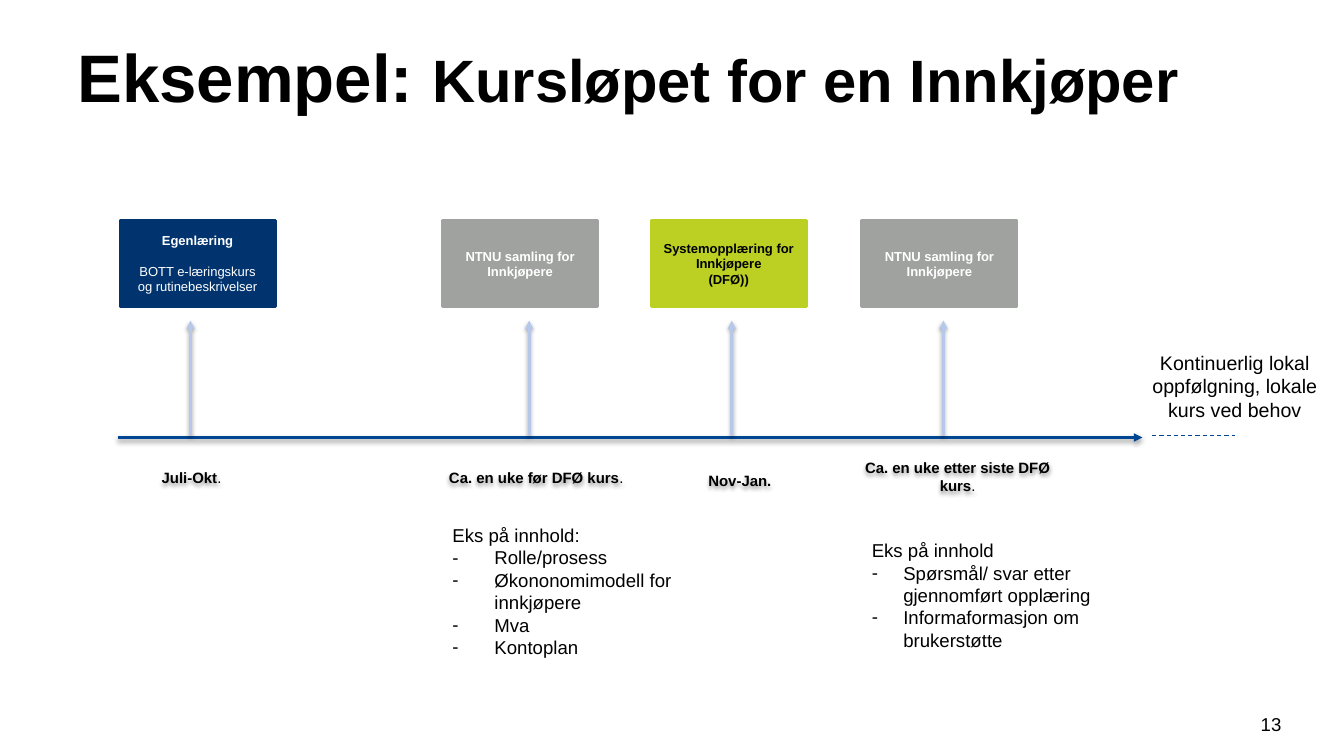
from dataclasses import dataclass, field

from lxml.etree import SubElement
from pptx import Presentation
from pptx.dml.color import RGBColor
from pptx.enum.dml import MSO_LINE_DASH_STYLE as Dash
from pptx.enum.shapes import MSO_CONNECTOR as Connector, MSO_SHAPE as Preset
from pptx.enum.text import MSO_ANCHOR as Anchor, PP_ALIGN as Align
from pptx.oxml.ns import qn
from pptx.util import Pt

BLACK = RGBColor(0x00, 0x00, 0x00)
WHITE = RGBColor(0xFF, 0xFF, 0xFF)
NAVY = RGBColor(0x01, 0x34, 0x6E)
BLUE = RGBColor(0x01, 0x46, 0x93)
PALE_BLUE = RGBColor(0xB6, 0xC8, 0xE9)
GREY = RGBColor(0xA0, 0xA2, 0xA0)
LIME = RGBColor(0xBC, 0xD0, 0x24)

BOX_TOP, BOX_WIDTH, BOX_HEIGHT = 157.7, 110.9, 61.2
ARROW_BOTTOM, ARROW_TOP = 311, 229
AXIS_Y = 312.5


@dataclass
class Run:
    text: str
    size: float
    bold: bool = False
    color: RGBColor = BLACK


@dataclass
class Para:
    runs: list[Run]
    hang: float = 0
    before: float = 0


@dataclass
class Area:
    left: float
    top: float
    width: float
    height: float


@dataclass
class Milestone:
    box_left: float
    fill: RGBColor
    course: list[Para]
    arrow_x: float
    when_area: Area
    when: list[Run]
    content_area: Area | None = None
    content: list[Para] = field(default_factory=list)


def course_line(text: str, color: RGBColor = WHITE, bold: bool = True, before: float = 0) -> Para:
    return Para([Run(text, 9.3, bold, color)], before=before)


def when_runs(text: str, stop: str = "") -> list[Run]:
    return [Run(text, 10.7, True)] + ([Run(stop, 10.7)] if stop else [])


def content_list(heading: str, items: list[str], hang: float) -> list[Para]:
    return [Para([Run(heading, 13.3)])] + [Para([Run(item, 13.3)], hang) for item in items]


def set_effects(shape, shadow: bool) -> None:
    effects = SubElement(shape._element.spPr, qn("a:effectLst"))
    if shadow:
        outer = SubElement(effects, qn("a:outerShdw"), blurRad=str(Pt(3.1)), dist=str(Pt(1.6)),
                           dir="5400000", rotWithShape="0")
        black = SubElement(outer, qn("a:srgbClr"), val="000000")
        SubElement(black, qn("a:alpha"), val="38000")


def write(shape, paras: list[Para], align: Align, anchor: Anchor) -> None:
    frame = shape.text_frame
    frame.word_wrap = True
    frame.vertical_anchor = anchor
    for index, para in enumerate(paras):
        paragraph = frame.paragraphs[0] if index == 0 else frame.add_paragraph()
        paragraph.alignment = align
        if para.before:
            paragraph.space_before = Pt(para.before)
        if para.hang:
            props = paragraph._p.get_or_add_pPr()
            props.set("marL", str(Pt(para.hang)))
            props.set("indent", str(-Pt(para.hang)))
            SubElement(props, qn("a:buFont"), typeface="Arial")
            SubElement(props, qn("a:buChar"), char="-")
        for part in para.runs:
            run = paragraph.add_run()
            run.text = part.text
            look = {"name": "Arial", "size": Pt(part.size), "bold": part.bold}
            for name, value in look.items():
                setattr(run.font, name, value)
            run.font.color.rgb = part.color


def add_text(slide, area: Area, paras: list[Para], align: Align = Align.LEFT,
             anchor: Anchor = Anchor.TOP, shadow: bool = False) -> None:
    box = slide.shapes.add_textbox(Pt(area.left), Pt(area.top), Pt(area.width), Pt(area.height))
    if shadow:
        set_effects(box, True)
    write(box, paras, align, anchor)


def add_line(slide, start: tuple[float, float], end: tuple[float, float], color: RGBColor,
             width: float = 2, arrow: bool = True) -> None:
    line = slide.shapes.add_connector(Connector.STRAIGHT, *map(Pt, start + end))
    line.line.color.rgb = color
    line.line.width = Pt(width)
    if arrow:
        SubElement(line.line._get_or_add_ln(), qn("a:tailEnd"), type="triangle")
    else:
        line.line.dash_style = Dash.DASH
    set_effects(line, arrow)


def add_milestone(slide, step: Milestone) -> None:
    box = slide.shapes.add_shape(Preset.RECTANGLE, Pt(step.box_left), Pt(BOX_TOP),
                                 Pt(BOX_WIDTH), Pt(BOX_HEIGHT))
    box.shadow.inherit = False
    box.fill.solid()
    box.fill.fore_color.rgb = step.fill
    box.line.color.rgb = step.fill
    box.line.width = Pt(2)
    write(box, step.course, Align.CENTER, Anchor.MIDDLE)
    add_line(slide, (step.arrow_x, ARROW_BOTTOM), (step.arrow_x, ARROW_TOP), PALE_BLUE)
    add_text(slide, step.when_area, [Para(step.when)], Align.CENTER, Anchor.MIDDLE, True)
    if step.content_area:
        add_text(slide, step.content_area, step.content)


MILESTONES = [
    Milestone(85.7, NAVY,
              [course_line("Egenlæring"),
               course_line("BOTT e-læringskurs", bold=False, before=10.7),
               course_line("og rutinebeskrivelser", bold=False)],
              136.1, Area(94.3, 326.9, 85, 28.8), when_runs("Juli-Okt", ".")),
    Milestone(316.1, GREY, [course_line("NTNU samling for Innkjøpere")],
              378, Area(302.4, 324.7, 161.3, 33.1), when_runs("Ca. en uke før DFØ kurs", "."),
              Area(316.1, 370.8, 174.2, 136.8),
              content_list("Eks på innhold:",
                           ["Rolle/prosess", "Økononomimodell for innkjøpere", "Mva", "Kontoplan"],
                           30)),
    Milestone(465.1, LIME,
              [course_line("Systemopplæring for Innkjøpere", BLACK), course_line("(DFØ))", BLACK)],
              522.7, Area(486, 329, 85, 28.8), when_runs("Nov-Jan.")),
    Milestone(615.6, GREY, [course_line("NTNU samling for Innkjøpere")],
              673.9, Area(603.4, 324, 161.3, 33.1),
              when_runs("Ca. en uke etter siste DFØ kurs", "."),
              Area(615.6, 381.6, 185.8, 87.8),
              content_list("Eks på innhold",
                           ["Spørsmål/ svar etter gjennomført opplæring",
                            "Informaformasjon om brukerstøtte"], 22.5)),
]


def main() -> None:
    deck = Presentation()
    deck.slide_width, deck.slide_height = Pt(960), Pt(540)
    slide = deck.slides.add_slide(deck.slide_layouts[6])

    # Title and page number
    add_text(slide, Area(48.2, 21.6, 864, 65.5),
             [Para([Run("Eksempel: ", 48, True), Run("Kursløpet for en Innkjøper", 42.7, True)])])
    add_text(slide, Area(889.9, 505.4, 36, 28.8), [Para([Run("13", 13.3)])], Align.CENTER)

    # Timeline with its milestones
    add_line(slide, (84, AXIS_Y), (816, AXIS_Y), BLUE)
    for step in MILESTONES:
        add_milestone(slide, step)

    # Follow-up after the courses
    add_line(slide, (823, ARROW_BOTTOM), (882, ARROW_BOTTOM), BLUE, 0.75, arrow=False)
    add_text(slide, Area(801.4, 247, 161.3, 58.3),
             [Para([Run("Kontinuerlig lokal oppfølgning, lokale kurs ved behov", 14)])],
             Align.CENTER)

    deck.save("out.pptx")


if __name__ == "__main__":
    main()
